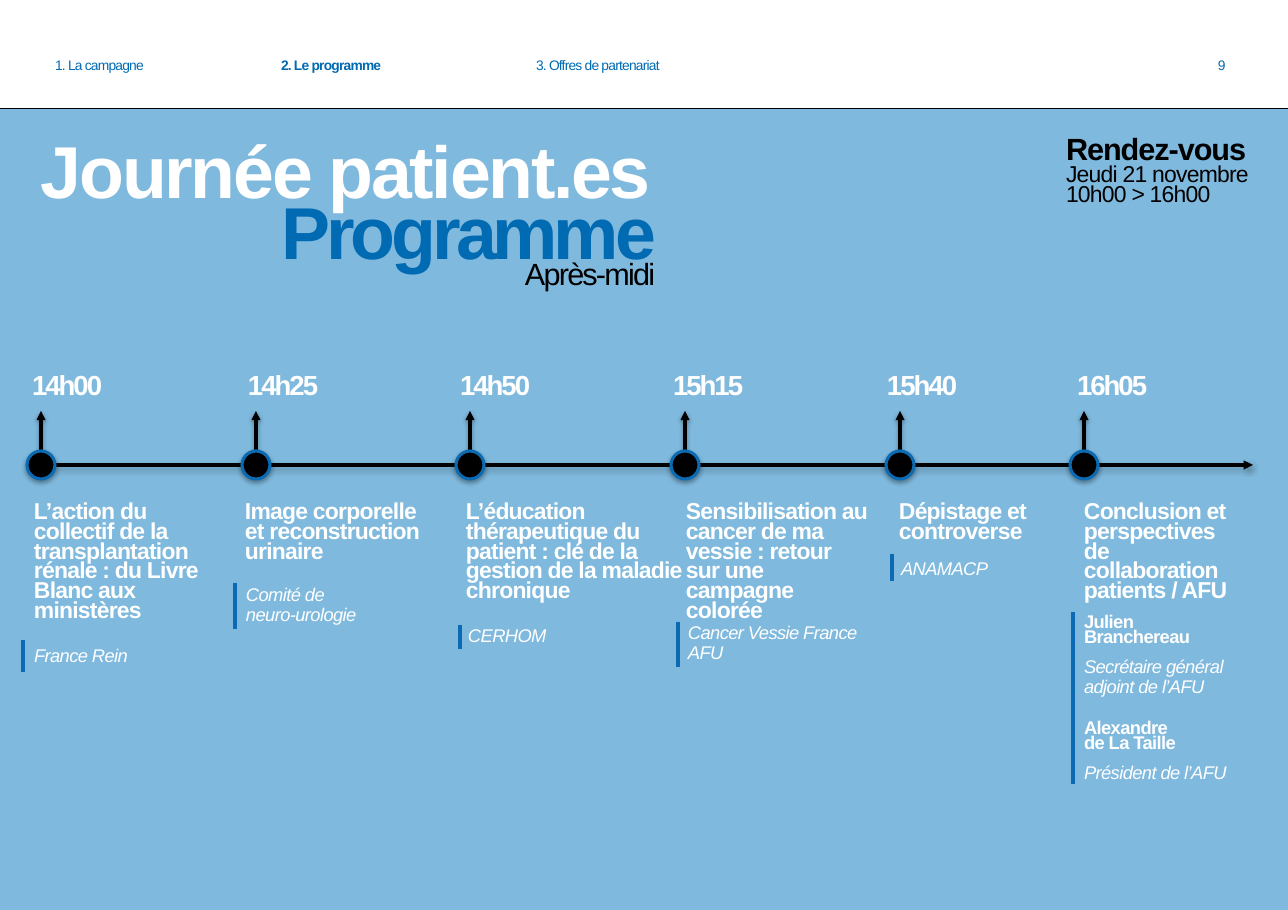
from lxml.etree import SubElement as Sub
from pptx import Presentation
from pptx.dml.color import RGBColor as RGB
from pptx.enum.shapes import MSO_CONNECTOR as CON, MSO_SHAPE as SHAPE
from pptx.enum.text import MSO_ANCHOR as ANCHOR, PP_ALIGN as ALIGN
from pptx.oxml.ns import qn
from pptx.util import Pt

PX = 8298
HUES = {"sky": "7FB9DD", "blue": "006AB3", "edge": "0B6AB2", "white": "FFFFFF", "black": "000000"}
RGBS = {name: RGB.from_string(code) for name, code in HUES.items()}

deck = Presentation()
deck.slide_width, deck.slide_height = 1288 * PX, 910 * PX
slide = deck.slides.add_slide(deck.slide_layouts[5])
shapes = slide.shapes


def write(box, place, text, size, hue, gap, bold=False, italic=False, lead=None, inset=0):
    box.left, box.top, box.width, box.height = [n * PX for n in place]
    frame = box.text_frame
    frame.word_wrap = True
    frame.vertical_anchor = ANCHOR.TOP
    frame.margin_left = frame.margin_top = frame.margin_bottom = 0
    frame.margin_right = inset * PX
    frame.text = text
    for para in frame.paragraphs:
        para.alignment = ALIGN.LEFT
        if lead:
            para.line_spacing = Pt(lead)
        for run in para.runs:
            font = run.font
            font.name, font.size, font.bold, font.italic = "Arial", Pt(size), bold, italic
            font.color.rgb = RGBS[hue]
            run._r.get_or_add_rPr().set("spc", str(round(gap * 100)))
    return frame


def draw(ends, hue, width, arrow=False):
    line = shapes.add_connector(CON.STRAIGHT, *[n * PX for n in ends])
    line.line.color.rgb = RGBS[hue]
    line.line.width = Pt(width)
    props = line._element.spPr
    if arrow:
        Sub(props.find(qn("a:ln")), qn("a:tailEnd"), type="triangle")
    glow = Sub(props, qn("a:effectLst"))
    if arrow:
        shade(glow, 38, 1.6)


def shade(glow, alpha, dist):
    outer = Sub(glow, qn("a:outerShdw"), blurRad=str(Pt(3)), dist=str(Pt(dist)), dir="5400000", rotWithShape="0")
    tint = Sub(outer, qn("a:srgbClr"), val=HUES["black"])
    Sub(tint, qn("a:alpha"), val=str(alpha * 1000))


def text_box():
    return shapes.add_textbox(0, 0, PX, PX)


panel = shapes.add_shape(SHAPE.RECTANGLE, -4 * PX, 109 * PX, 1298 * PX, 804 * PX)
panel.shadow.inherit = False
panel.fill.solid()
panel.fill.fore_color.rgb = RGBS["sky"]
panel.line.fill.background()

for x, width, label in [(55, 115, "1. La campagne"), (281, 115, "2. Le programme"),
                        (536, 138, "3. Offres de partenariat"), (1218, 17, "9")]:
    write(text_box(), (x, 57, width, 15), label, 9, "blue", -0.5, bold=label.startswith("2"))
draw((-1, 108, 1289, 108), "black", 0.6)

title = shapes.title
title.element.getparent().append(title.element)
write(title, (41, 125, 1128, 82), "Journée patient.es", 48, "white", -1.5, bold=True)
write(text_box(), (282, 186, 475, 82), "Programme", 48, "blue", -2.8, bold=True)
write(text_box(), (525, 255, 637, 34), "Après-midi", 20, "black", -1.2)

meet = write(text_box(), (1066, 147, 222, 61), "Rendez-vous\nJeudi 21 novembre\n10h00 > 16h00",
             15, "black", -0.5, lead=13)
head = meet.paragraphs[0].runs[0]
head.font.size, head.font.bold = Pt(20), True
head._r.get_or_add_rPr().set("spc", "-70")

draw((36, 465, 1253, 465), "black", 2, arrow=True)

STOPS = [
    (41, "14h00", 32, 34, 221, 30,
     "L’action du collectif de la transplantation rénale : du Livre Blanc aux ministères"),
    (256, "14h25", 248, 245, 221, 0, "Image corporelle\net reconstruction urinaire"),
    (470, "14h50", 460, 466, 221, 0,
     "L’éducation thérapeutique du patient : clé de la gestion de la maladie chronique"),
    (685, "15h15", 673, 686, 209, 26,
     "Sensibilisation au cancer de ma vessie : retour sur une campagne colorée"),
    (900, "15h40", 887, 899, 221, 0, "Dépistage et controverse"),
    (1084, "16h05", 1077, 1084, 185, 33,
     "Conclusion et perspectives de collaboration\npatients / AFU"),
]
for mid, hour, left, x, width, inset, topic in STOPS:
    draw((mid, 457, mid, 411), "black", 2, arrow=True)
    dot = shapes.add_shape(SHAPE.OVAL, (mid - 14) * PX, 451 * PX, 28 * PX, 28 * PX)
    dot.shadow.inherit = False
    dot.fill.solid()
    dot.fill.fore_color.rgb = RGBS["black"]
    dot.line.color.rgb = RGBS["edge"]
    dot.line.width = Pt(2)
    shade(dot._element.spPr.find(qn("a:effectLst")), 35, 1.8)
    write(text_box(), (left, 368, 73, 31), hour, 18, "white", -1.3, bold=True)
    write(text_box(), (x, 504, width, 120), topic, 15, "white", -0.5, bold=True, lead=13, inset=inset)

NOTES = [
    (34, 646, "France Rein", 13),
    (246, 585, "Comité de\nneuro-urologie", 13),
    (468, 628, "CERHOM", 12),
    (688, 623, "Cancer Vessie France\nAFU", 13),
    (901, 559, "ANAMACP", 13),
    (1084, 617, "Julien\nBranchereau", 10),
    (1084, 657, "Secrétaire général\nadjoint de l’AFU", 13),
    (1084, 723, "Alexandre\nde La Taille", 10),
    (1084, 763, "Président de l’AFU", 13),
]
for x, y, note, lead in NOTES:
    name = lead == 10
    rows = note.count("\n") + 1
    write(text_box(), (x, y, 197, 20 * rows), note, 12, "white", -0.4, bold=name, italic=not name, lead=lead)

for x, top, end in [(23, 640, 672), (235, 583, 629), (460, 625, 649),
                    (678, 622, 667), (892, 554, 581), (1073, 612, 784)]:
    draw((x, end, x, top), "edge", 2)

deck.save("out.pptx")
